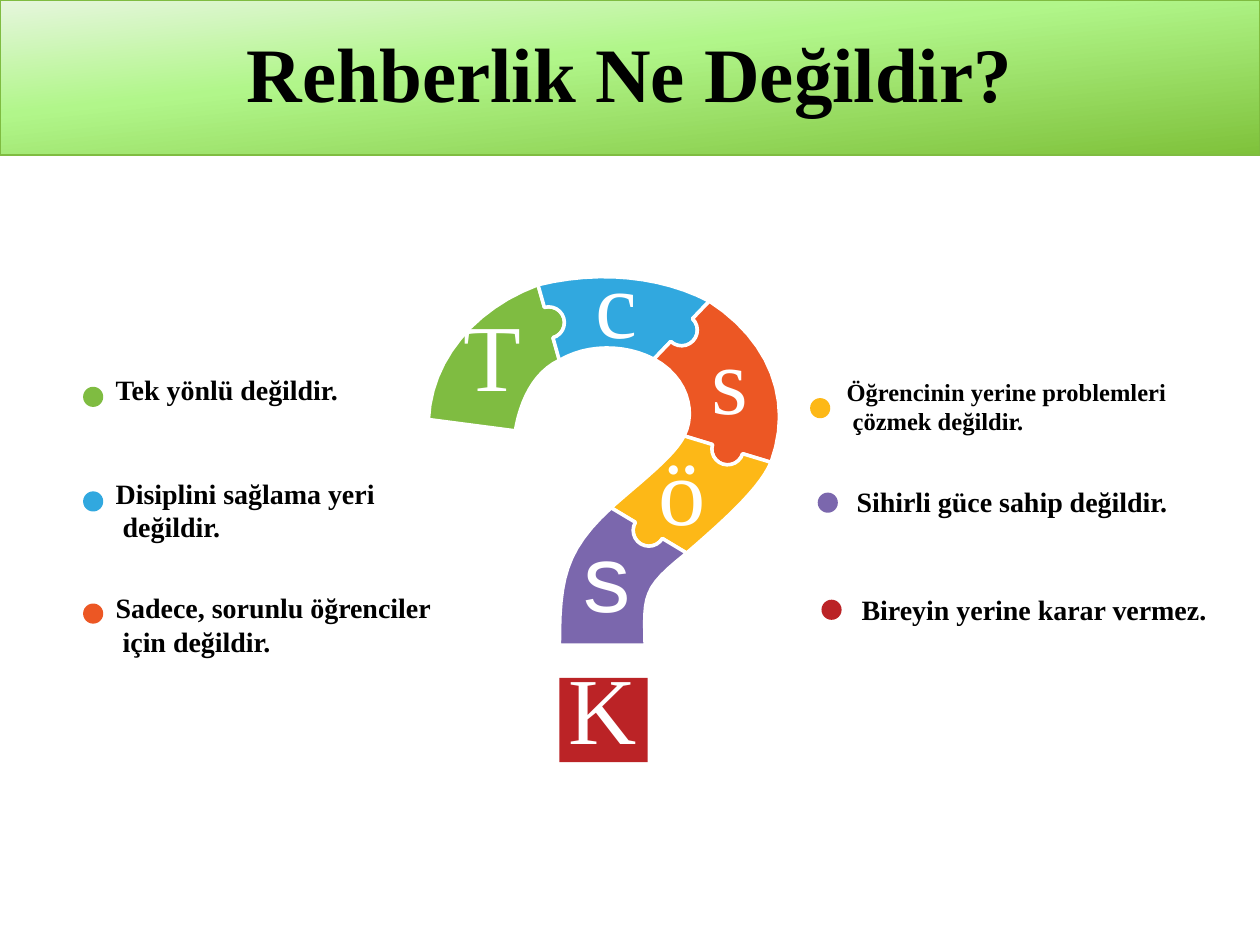
import math
from dataclasses import dataclass

from lxml import etree
from pptx import Presentation
from pptx.dml.color import RGBColor
from pptx.enum.shapes import MSO_SHAPE
from pptx.enum.text import MSO_ANCHOR, MSO_AUTO_SIZE, PP_ALIGN
from pptx.oxml.ns import qn
from pptx.util import Inches, Pt

CENTER, LEFT = PP_ALIGN.CENTER, PP_ALIGN.LEFT
MIDDLE, TOP = MSO_ANCHOR.MIDDLE, MSO_ANCHOR.TOP
NO_FIT, GROW = MSO_AUTO_SIZE.NONE, MSO_AUTO_SIZE.SHAPE_TO_FIT_TEXT
RECTANGLE, OVAL = MSO_SHAPE.RECTANGLE, MSO_SHAPE.OVAL

# The slide is a grid of 1000 columns and 750 rows of square cells.
COLUMNS, ROWS = 1000, 750
CELL = Inches(0.01)
SERIF, SANS = "Times New Roman", "Arial"
GREEN, BLUE, ORANGE = "7FBC41", "31A8DF", "EC5724"
YELLOW, PURPLE, RED = "FDB817", "7B67AD", "BB2326"
BLACK, WHITE = "000000", "FFFFFF"
DOT_SIZE, LETTER_SIZE, KNOB_RADIUS = 16, 38, 12.5
STEPS = 12

Point = tuple[float, float]


@dataclass
class Seam:
    """Cut across the question mark, from its outer to its inner edge."""
    outer: Point
    inner: Point
    knob: bool = True


@dataclass
class Piece:
    """Puzzle piece between two seams, with the Bézier controls of both its edges."""
    color: str
    outer_controls: tuple[Point, Point]
    inner_controls: tuple[Point, Point]


@dataclass
class Letter:
    text: str
    left: int
    top: int
    font: str = SERIF


@dataclass
class Statement:
    color: str
    dot_at: tuple[int, int]
    text_at: tuple[int, int]
    width: int
    text: str
    size: int = 16


SEAMS = [
    Seam((340, 333), (409, 342), knob=False),
    Seam((427, 226), (444, 286)),
    Seam((563, 239), (519, 285)),
    Seam((612, 367), (543, 346)),
    Seam((545, 439), (485, 403)),
    Seam((512, 512), (444, 512), knob=False),
]
PIECES = [
    Piece(GREEN, ((342, 286), (376, 245)), ((413, 319), (423, 296))),
    Piece(BLUE, ((475, 214), (525, 219)), ((466, 273), (496, 273))),
    Piece(ORANGE, ((611, 270), (630, 318)), ((545, 299), (553, 326))),
    Piece(YELLOW, ((604, 386), (580, 409)), ((535, 362), (510, 381))),
    Piece(PURPLE, ((510, 467), (511, 472)), ((448, 437), (444, 460))),
]
QUESTION_POINT = (444, 538, 70, 67)

LETTERS = [
    Letter("T", 372, 262), Letter("c", 470, 220), Letter("s", 560, 280),
    Letter("ö", 522, 368), Letter("s", 463, 437, SANS), Letter("K", 459, 542),
]
STATEMENTS = [
    Statement(GREEN, (66, 307), (82, 291), 219, "Tek yönlü değildir."),
    Statement(BLUE, (66, 390), (82, 373), 247, "Disiplini sağlama yeri\n değildir."),
    Statement(ORANGE, (66, 479), (82, 464), 303, "Sadece, sorunlu öğrenciler\n için değildir."),
    Statement(YELLOW, (643, 316), (662, 294), 301,
              "Öğrencinin yerine problemleri\n çözmek değildir.", 14),
    Statement(PURPLE, (649, 391), (670, 380), 294, "Sihirli güce sahip değildir."),
    Statement(RED, (652, 476), (674, 465), 321, "Bireyin yerine karar vermez."),
]


def cells(*counts: float) -> list[int]:
    return [round(count * CELL) for count in counts]


def paint(shape, color: str) -> None:
    shape.fill.solid()
    shape.fill.fore_color.rgb = RGBColor.from_string(color)
    shape.line.fill.background()
    shape.shadow.inherit = False


def outline(shape, color: str, points: float) -> None:
    shape.line.color.rgb = RGBColor.from_string(color)
    shape.line.width = Pt(points)


def write(frame, text: str, *, size: int, color: str = BLACK, font: str = SERIF,
          bold: bool = False, align=LEFT, anchor=TOP, fit=NO_FIT,
          wrap: bool = False, margin: int | None = None, spacing: float | None = None) -> None:
    frame.word_wrap = wrap
    frame.auto_size = fit
    frame.vertical_anchor = anchor
    if margin is not None:
        frame.margin_left = frame.margin_right = margin
        frame.margin_top = frame.margin_bottom = margin
    frame.text = text
    for paragraph in frame.paragraphs:
        paragraph.alignment = align
        paragraph.line_spacing = spacing
        for run in paragraph.runs:
            run.font.name, run.font.size, run.font.bold = font, Pt(size), bold
            run.font.color.rgb = RGBColor.from_string(color)


def bezier(start: Point, controls: tuple[Point, Point], end: Point) -> list[Point]:
    points = []
    for step in range(STEPS + 1):
        t = step / STEPS
        weights = ((1 - t) ** 3, 3 * t * (1 - t) ** 2, 3 * t * t * (1 - t), t ** 3)
        points.append(tuple(sum(weight * point[axis] for weight, point
                                in zip(weights, (start, *controls, end))) for axis in (0, 1)))
    return points


def seam_points(seam: Seam) -> list[Point]:
    """Points from outer to inner edge, with a half-round knob into the next piece."""
    (x1, y1), (x2, y2) = seam.outer, seam.inner
    if not seam.knob:
        return [seam.outer, seam.inner]
    direction = math.atan2(y2 - y1, x2 - x1)
    angles = [direction + math.pi * (1 + step / STEPS) for step in range(STEPS + 1)]
    knob = [((x1 + x2) / 2 + KNOB_RADIUS * math.cos(angle),
             (y1 + y2) / 2 + KNOB_RADIUS * math.sin(angle)) for angle in angles]
    return [seam.outer, *knob, seam.inner]


def draw_piece(slide, piece: Piece, first: Seam, last: Seam) -> None:
    points = (bezier(first.outer, piece.outer_controls, last.outer) + seam_points(last)
              + bezier(first.inner, piece.inner_controls, last.inner)[::-1]
              + seam_points(first)[::-1])
    start, *vertices = [cells(*point) for point in points]
    builder = slide.shapes.build_freeform(*start, scale=1.0)
    builder.add_line_segments(vertices, close=True)
    shape = builder.convert_to_shape()
    paint(shape, piece.color)
    outline(shape, WHITE, 2)


def draw_question_mark(slide) -> None:
    for piece, first, last in zip(PIECES, SEAMS, SEAMS[1:]):
        draw_piece(slide, piece, first, last)
    paint(slide.shapes.add_shape(RECTANGLE, *cells(*QUESTION_POINT)), RED)


def draw_letter(slide, letter: Letter) -> None:
    box = slide.shapes.add_textbox(*cells(letter.left, letter.top, LETTER_SIZE, LETTER_SIZE))
    write(box.text_frame, letter.text, size=54, color=WHITE, font=letter.font,
          align=CENTER, anchor=MIDDLE, margin=0)


def draw_statement(slide, statement: Statement) -> None:
    dot = slide.shapes.add_shape(OVAL, *cells(*statement.dot_at, DOT_SIZE, DOT_SIZE))
    paint(dot, statement.color)
    lines = statement.text.count("\n") + 1
    height = 10 + 1.68 * statement.size * lines
    box = slide.shapes.add_textbox(*cells(*statement.text_at, statement.width, height))
    write(box.text_frame, statement.text, size=statement.size, bold=True, fit=GROW)


def fill_gradient(shape, stops: list[tuple[int, str]], angle: int) -> None:
    shape.fill.gradient()
    gradient = shape._element.spPr.find(qn("a:gradFill"))
    for child in list(gradient):
        gradient.remove(child)
    stop_list = etree.SubElement(gradient, qn("a:gsLst"))
    for position, color in stops:
        stop = etree.SubElement(stop_list, qn("a:gs"), pos=str(position * 1000))
        etree.SubElement(stop, qn("a:srgbClr"), val=color)
    etree.SubElement(gradient, qn("a:lin"), ang=str(angle * 60000), scaled="0")


def draw_title(slide, text: str) -> None:
    title = slide.shapes.title
    title.left, title.top, title.width, title.height = cells(0, 0, COLUMNS, 123)
    fill_gradient(title, [(0, "E6F6DD"), (40, "B1F68A"), (100, "7FC23B")], 84)
    outline(title, GREEN, 0.75)
    write(title.text_frame, text, size=44, bold=True, align=CENTER,
          anchor=MIDDLE, wrap=True, spacing=0.9)


def main() -> None:
    presentation = Presentation()
    presentation.slide_width, presentation.slide_height = cells(COLUMNS, ROWS)
    slide = presentation.slides.add_slide(presentation.slide_layouts[5])
    draw_title(slide, "Rehberlik Ne Değildir?")
    draw_question_mark(slide)
    for statement in STATEMENTS:
        draw_statement(slide, statement)
    for letter in LETTERS:
        draw_letter(slide, letter)
    presentation.save("out.pptx")


if __name__ == "__main__":
    main()
